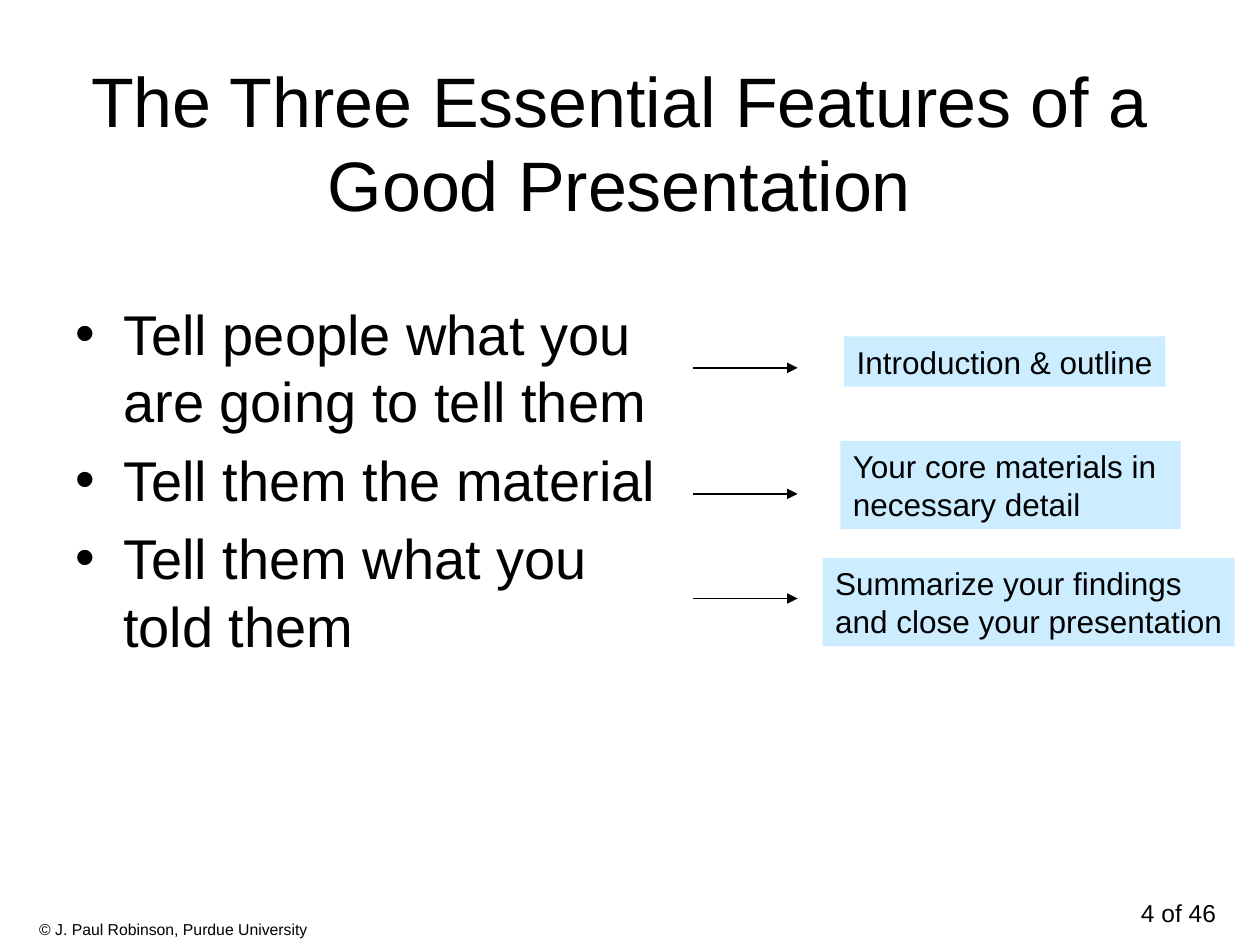
from lxml.etree import SubElement
from pptx import Presentation
from pptx.dml.color import RGBColor
from pptx.enum.shapes import MSO_CONNECTOR, MSO_SHAPE
from pptx.enum.text import MSO_ANCHOR, PP_ALIGN
from pptx.oxml.ns import qn
from pptx.util import Inches, Pt

BLACK = RGBColor(0x00, 0x00, 0x00)
PALE_BLUE = RGBColor(0xCC, 0xEC, 0xFF)

BULLETS = [
    "Tell people what you are going to tell them",
    "Tell them the material",
    "Tell them what you told them",
]
# Each note: left, top, width, height, lines, height of its arrow
NOTES = [
    (6.7, 2.67, 2.55, 0.4, ["Introduction & outline"], 2.92),
    (6.67, 3.5, 2.7, 0.7, ["Your core materials in", "necessary detail"], 3.92),
    (6.53, 4.43, 3.27, 0.7,
     ["Summarize your findings", "and close your presentation"], 4.75),
]


class SlideBuilder:
    def __init__(self, page, font_name="Arial", color=BLACK):
        self.page = page
        self.font_name = font_name
        self.color = color

    def fill_text(self, frame, lines, size, **paragraph_format):
        frame.word_wrap = True
        for index, line in enumerate(lines):
            para = frame.paragraphs[0] if index == 0 else frame.add_paragraph()
            for name, value in paragraph_format.items():
                setattr(para, name, value)
            span = para.add_run()
            span.text = line
            font_format = {"name": self.font_name, "size": Pt(size)}
            for name, value in font_format.items():
                setattr(span.font, name, value)
            span.font.color.rgb = self.color

    def text(self, place, lines, size, anchor=MSO_ANCHOR.TOP, **paragraph_format):
        box = self.page.shapes.add_textbox(*map(Inches, place))
        box.text_frame.vertical_anchor = anchor
        self.fill_text(box.text_frame, lines, size, **paragraph_format)
        return box

    def bullets(self, place, lines, size, indent):
        box = self.text(place, lines, size, space_before=Pt(size * 0.2))
        for para in box.text_frame.paragraphs:
            properties = para._p.get_or_add_pPr()
            properties.set("marL", str(Inches(indent)))
            properties.set("indent", str(-Inches(indent)))
            SubElement(properties, qn("a:buFont"), typeface=self.font_name)
            SubElement(properties, qn("a:buChar"), char="•")

    def note(self, place, lines, size=18):
        box = self.page.shapes.add_shape(MSO_SHAPE.RECTANGLE, *map(Inches, place))
        box.shadow.inherit = False
        box.fill.solid()
        box.fill.fore_color.rgb = PALE_BLUE
        box.line.fill.background()
        frame_format = {"vertical_anchor": MSO_ANCHOR.TOP, "margin_right": 0}
        for name, value in frame_format.items():
            setattr(box.text_frame, name, value)
        self.fill_text(box.text_frame, lines, size, alignment=PP_ALIGN.LEFT)

    def arrow(self, start, end, height):
        line = self.page.shapes.add_connector(
            MSO_CONNECTOR.STRAIGHT, *map(Inches, (start, height, end, height)))
        line.line.color.rgb = self.color
        line.line.width = Pt(0.75)
        SubElement(line.line._get_or_add_ln(), qn("a:tailEnd"), type="triangle")
        SubElement(line._element.spPr, qn("a:effectLst"))


def main():
    deck = Presentation()
    deck.slide_width, deck.slide_height = Inches(10), Inches(7.5)
    builder = SlideBuilder(deck.slides.add_slide(deck.slide_layouts[6]))

    builder.text((-0.75, 7.25, 4.25, 0.18),
                 ["© J. Paul Robinson, Purdue University"], 9,
                 alignment=PP_ALIGN.CENTER)
    builder.text((7.42, 7.08, 2.33, 0.33), ["4 of 46"], 14,
                 alignment=PP_ALIGN.RIGHT)
    builder.text((0.33, 0.5, 9.17, 1.25),
                 ["The Three Essential Features of a Good Presentation"], 40,
                 anchor=MSO_ANCHOR.MIDDLE, alignment=PP_ALIGN.CENTER)
    builder.bullets((0.5, 2.33, 5, 4.37), BULLETS, 32, indent=0.38)
    for *place, lines, arrow_height in NOTES:
        builder.note(place, lines)
        builder.arrow(5.5, 6.33, arrow_height)

    deck.save("out.pptx")


if __name__ == "__main__":
    main()
